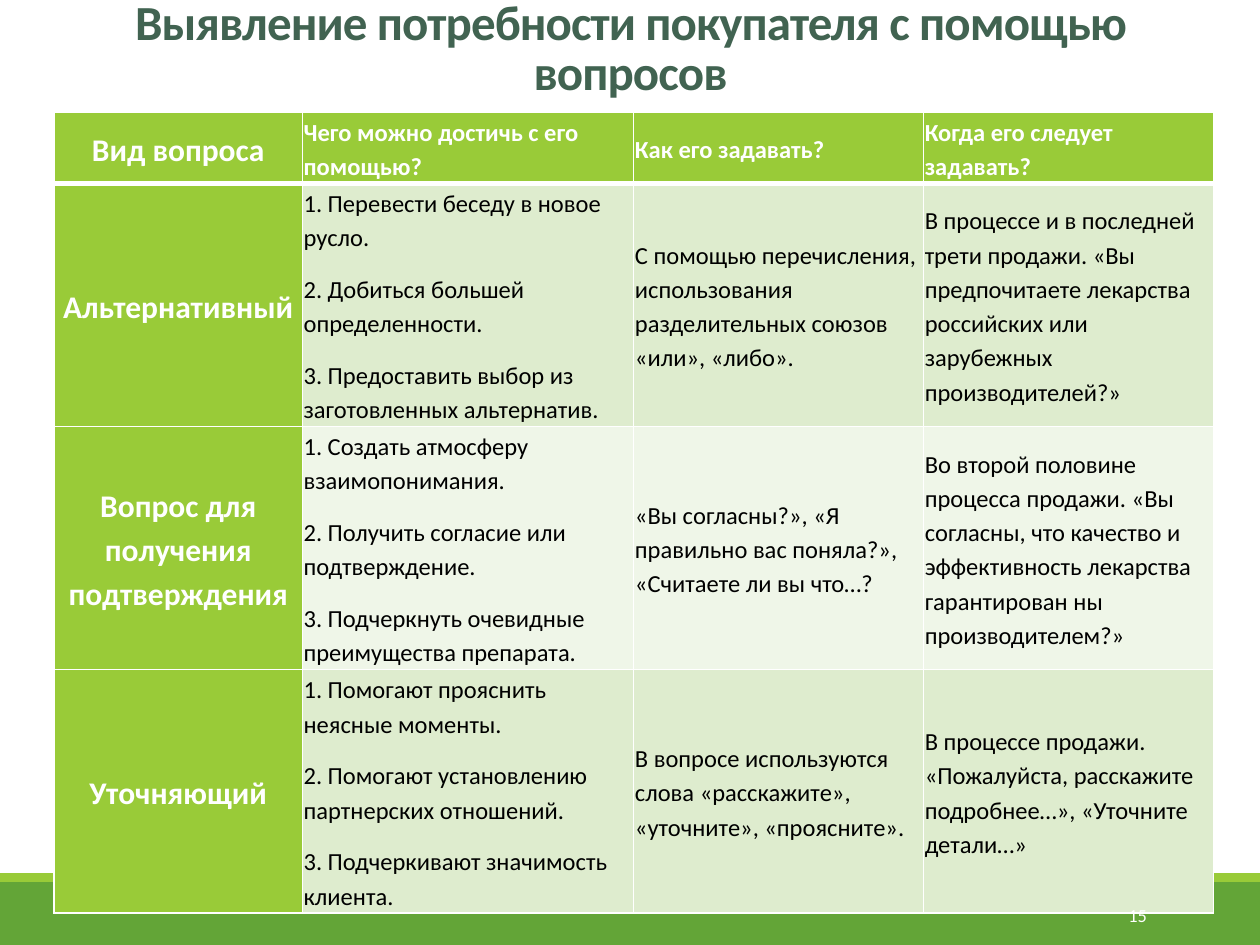
from lxml.etree import SubElement
from pptx import Presentation
from pptx.dml.color import RGBColor
from pptx.enum.shapes import MSO_SHAPE
from pptx.enum.text import MSO_ANCHOR, PP_ALIGN
from pptx.oxml import parse_xml
from pptx.oxml.ns import nsdecls, qn
from pptx.util import Inches, Pt

TITLE = "Выявление потребности покупателя с помощью вопросов"
PAGE_NUMBER = "15"
HEADER = ["Вид вопроса", "Чего можно достичь с его помощью?",
          "Как его задавать?", "Когда его следует задавать?"]
# Question kind, goals, way of asking, moment of asking
QUESTIONS = [
    ("Альтернативный",
     ["1. Перевести беседу в новое русло.",
      "2. Добиться большей определенности.",
      "3. Предоставить выбор из заготовленных альтернатив."],
     "С помощью перечисления, использования разделительных союзов «или», «либо».",
     "В процессе и в последней трети продажи. «Вы предпочитаете лекарства "
     "российских или зарубежных производителей?»"),
    ("Вопрос для получения подтверждения",
     ["1. Создать атмосферу взаимопонимания.",
      "2. Получить согласие или подтверждение.",
      "3. Подчеркнуть очевидные преимущества препарата."],
     "«Вы согласны?», «Я правильно вас поняла?», «Считаете ли вы что…?",
     "Во второй половине процесса продажи. «Вы согласны, что качество и "
     "эффективность лекарства гарантирован ны производителем?»"),
    ("Уточняющий",
     ["1. Помогают прояснить неясные моменты.",
      "2. Помогают установлению партнерских отношений.",
      "3. Подчеркивают значимость клиента."],
     "В вопросе используются слова «расскажите», «уточните», «проясните».",
     "В процессе продажи. «Пожалуйста, расскажите подробнее…», «Уточните детали…»"),
]

GREEN, LIME, WHITE, BLACK = "63A537", "99CB38", "FFFFFF", "000000"
TITLE_COLOR = "416351"
BANDS = ["DEECCE", "EFF6E8"]
COLUMN_WIDTHS = [1.97, 2.63, 2.3, 2.3]
ROW_HEIGHTS = [0.54] + [1.93] * len(QUESTIONS)
FOOTER_BANDS = [(7, 0.5, GREEN), (6.93, 0.07, LIME)]  # top, height, fill


def color(value):
    return RGBColor.from_string(value)


def set_all(target, values):
    for name, value in values.items():
        setattr(target, name, value)


def write(frame, lines, size, text_color, bold=False, **paragraph_format):
    """Fill a text frame with one paragraph per line."""
    for index, line in enumerate(lines):
        paragraph = frame.add_paragraph() if index else frame.paragraphs[0]
        set_all(paragraph, paragraph_format)
        run = paragraph.add_run()
        run.text = line
        set_all(run.font, {"name": "Calibri", "size": Pt(size), "bold": bold})
        run.font.color.rgb = color(text_color)


def add_text(slide, box, lines, anchor, margin, **text_format):
    frame = slide.shapes.add_textbox(*map(Inches, box)).text_frame
    set_all(frame, {"word_wrap": True, "vertical_anchor": anchor,
                    "margin_top": margin, "margin_bottom": margin})
    write(frame, lines, **text_format)
    return frame


def set_borders(cell, widths):
    """Draw white cell borders; widths in points: left, right, top, bottom."""
    properties = cell._tc.get_or_add_tcPr()
    for index, (side, width) in enumerate(zip("LRTB", widths)):
        line = parse_xml(f'<a:ln{side} {nsdecls("a")} w="{Pt(width)}"/>')
        fill = SubElement(line, qn("a:solidFill"))
        SubElement(fill, qn("a:srgbClr"), val=WHITE)
        properties.insert(index, line)


def add_questions_table(slide):
    rows = [HEADER, *QUESTIONS]
    table = slide.shapes.add_table(
        len(rows), len(HEADER), Inches(0.43), Inches(0.89),
        Inches(sum(COLUMN_WIDTHS)), Inches(sum(ROW_HEIGHTS))).table
    for column, width in zip(table.columns, COLUMN_WIDTHS):
        column.width = Inches(width)
    for row, height in zip(table.rows, ROW_HEIGHTS):
        row.height = Inches(height)

    margins = {f"margin_{side}": Inches(0.01)
               for side in ("left", "right", "top", "bottom")}
    for r, row in enumerate(rows):
        for c, content in enumerate(row):
            cell = table.cell(r, c)
            is_heading = r == 0 or c == 0
            set_all(cell, {**margins, "vertical_anchor": MSO_ANCHOR.MIDDLE})
            cell.fill.solid()
            cell.fill.fore_color.rgb = color(
                LIME if is_heading else BANDS[(r - 1) % len(BANDS)])
            set_borders(cell, (1, 1, 3 if r == 1 else 1, 3 if r == 0 else 1))
            write(cell.text_frame,
                  content if isinstance(content, list) else [content],
                  size=14 if c else 18,
                  text_color=WHITE if is_heading else BLACK,
                  bold=is_heading,
                  alignment=PP_ALIGN.LEFT if c else PP_ALIGN.CENTER,
                  line_spacing=1.15, space_after=Pt(10))


def main():
    presentation = Presentation()
    set_all(presentation, {"slide_width": Inches(10), "slide_height": Inches(7.5)})
    slide = presentation.slides.add_slide(presentation.slide_layouts[6])

    for top, height, fill in FOOTER_BANDS:
        band = slide.shapes.add_shape(MSO_SHAPE.RECTANGLE, 0, Inches(top),
                                      presentation.slide_width, Inches(height))
        band.shadow.inherit = False
        band.fill.solid()
        band.fill.fore_color.rgb = color(fill)
        band.line.fill.background()

    add_questions_table(slide)
    add_text(slide, (8.12, 7.06, 1.08, 0.4), [PAGE_NUMBER], MSO_ANCHOR.MIDDLE,
             Inches(0.05), size=10.5, text_color=WHITE, alignment=PP_ALIGN.RIGHT)
    title = add_text(slide, (0.88, 0, 8.25, 0.8), [TITLE], MSO_ANCHOR.MIDDLE, 0,
                     size=28, text_color=TITLE_COLOR, bold=True,
                     alignment=PP_ALIGN.CENTER, line_spacing=0.85)
    title.paragraphs[0].runs[0].font._element.set("spc", "-50")

    presentation.save("out.pptx")


if __name__ == "__main__":
    main()
